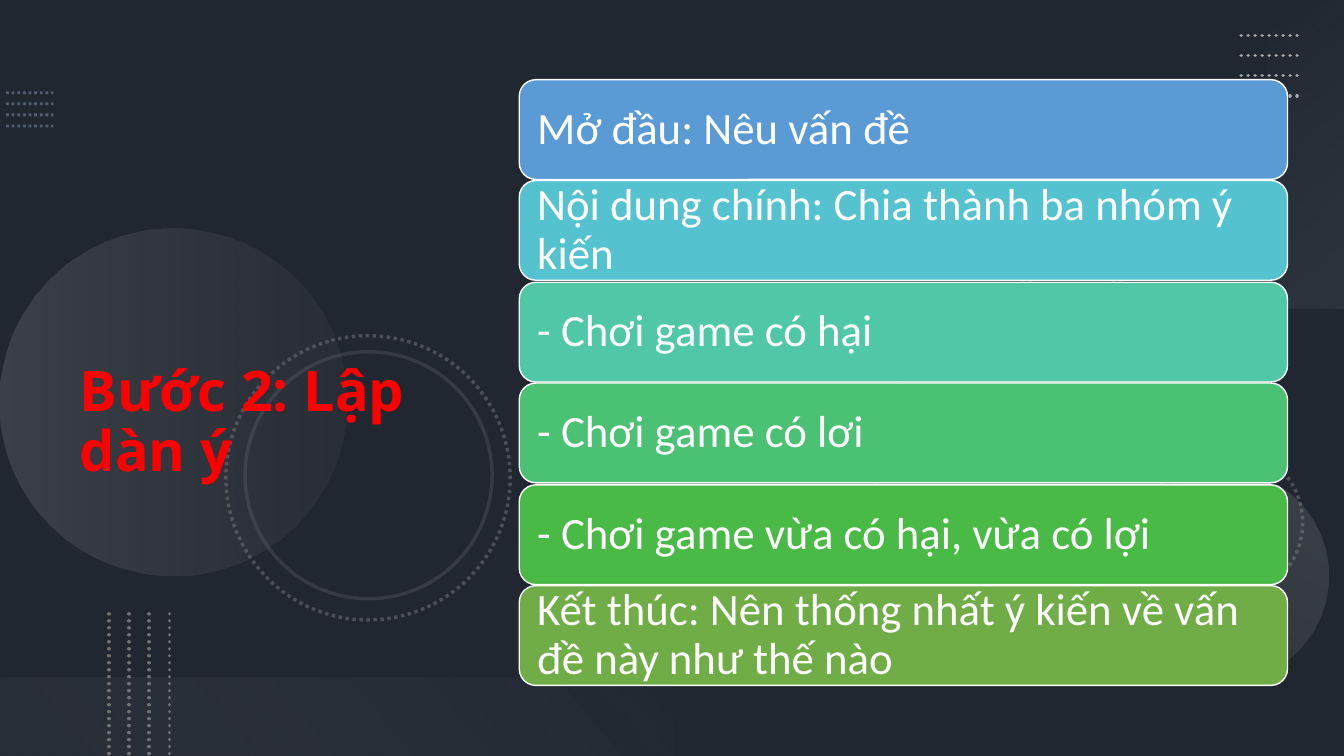
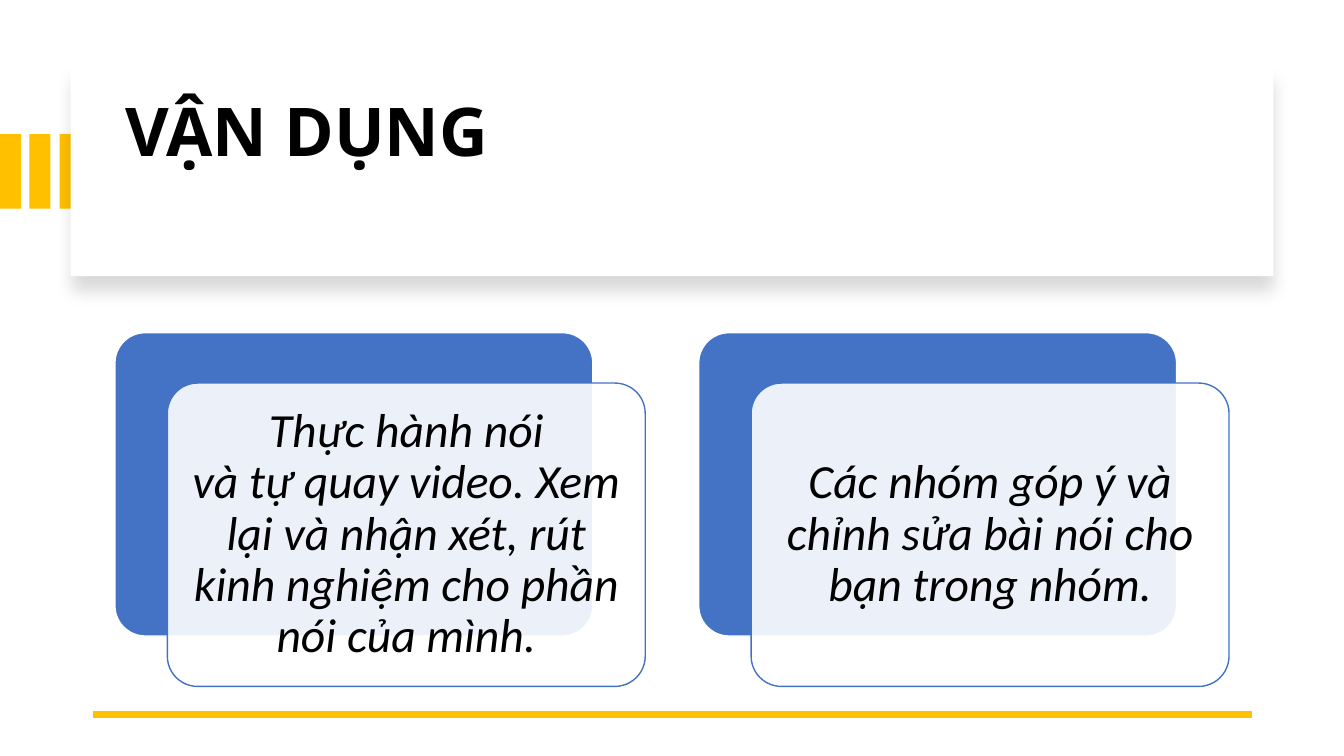
"""Build two lesson slides: a speaking outline and a practice task."""
from lxml.etree import SubElement
from pptx import Presentation
from pptx.dml.color import RGBColor
from pptx.enum.dml import MSO_LINE
from pptx.enum.shapes import MSO_CONNECTOR, MSO_SHAPE as SHAPE
from pptx.enum.text import MSO_ANCHOR as ANCHOR, MSO_AUTO_SIZE, PP_ALIGN as ALIGN
from pptx.oxml.ns import qn
from pptx.util import Emu, Pt

PX = 9144
SLIDE_SIZE = (1333, 750)
COLOURS = {
    "slate": "44546A", "black": "000000", "white": "FFFFFF", "red": "FF0000",
    "mist": "8497B0", "grey": "767171", "silver": "AFABAB", "pale": "F5F5F5",
    "gold": "FFC000", "blue": "4472C4",
}
TITLE_FONT, BODY_FONT = "Open Sans", "Calibri"
HARD_SPACE = chr(160)

OUTLINE_TITLE = "Bước 2: Lập dàn ý"
OUTLINE_STEPS = [
    ("Mở đầu: Nêu vấn đề", "5B9BD5"),
    ("Nội dung chính: Chia thành ba nhóm ý kiến", "55C3CF"),
    ("- Chơi game có hại", "50C8A7"),
    ("- Chơi game có lơi", "4BC174"),
    ("- Chơi game vừa có hại, vừa có lợi", "4ABA46"),
    ("Kết thúc: Nên thống nhất ý kiến về vấn đề này như thế nào", "70AD47"),
]
PRACTICE_TITLE = "VẬN DỤNG"
PRACTICE_TASKS = [
    f"Thực hành nói và{HARD_SPACE}tự{HARD_SPACE}quay video. Xem lại và nhận xét, "
    "rút kinh nghiệm cho phần nói của mình.",
    "Các nhóm góp ý và chỉnh sửa bài nói cho bạn trong nhóm.",
]

RINGS = [
    (869, 274, 390, 30, True),
    (1141, 443, 151, 30, True),
    (224, 333, 282, 30, True),
    (243, 349, 245, 15, False),
]
GRADIENTS = [
    (SHAPE.OVAL, (0, 227, 344, 344), 270, 90, [(0, "silver", 20), (100, "grey", 10)]),
    (SHAPE.OVAL, (1110, 467, 208, 208), 210, 90, [(0, "silver", 10), (100, "silver", 20)]),
    (SHAPE.RECTANGLE, (1142, 114, 306, 78), 270, 140, [(0, "pale", 0), (100, "silver", 10)]),
    (SHAPE.RECTANGLE, (0, 672, 667, 78), 180, 140, [(10, "grey", 10), (100, "pale", 0)]),
]
DOT_ROWS = [
    {"start": (6, 92), "length": (47, 0), "step": (0, 11), "style": ("mist", 2, 50, "flat")},
    {"start": (1231, 35), "length": (60, 0), "step": (0, 20), "style": ("silver", 2.5, 100, "rnd")},
    {"start": (108, 609), "length": (0, 141), "step": (20, 0), "style": ("grey", 2.5, 100, "rnd")},
]
DOTS_PER_ROW = 4


def px(value):
    return Emu(value * PX)


def rgb(name):
    return RGBColor.from_string(COLOURS.get(name, name))


def set_alpha(colour_element, percent):
    SubElement(colour_element, qn("a:alpha")).set("val", str(percent * 1000))


def set_line(line, colour, width, dotted=False):
    line.color.rgb = rgb(colour)
    line.width = Pt(width)
    if dotted:
        line.dash_style = MSO_LINE.ROUND_DOT


def add_box(slide, kind, box, fill=None, alpha=100, corner=None):
    shape = slide.shapes.add_shape(kind, *map(px, box))
    shape.shadow.inherit = False
    shape.line.fill.background()
    if corner is not None:
        shape.adjustments[0] = corner
    if fill is None:
        shape.fill.background()
    else:
        shape.fill.solid()
        shape.fill.fore_color.rgb = rgb(fill)
        if alpha < 100:
            set_alpha(next(shape.element.spPr.iter(qn("a:srgbClr"))), alpha)
    return shape


def add_gradient(slide, kind, box, rotation, angle, stops):
    shape = add_box(slide, kind, box)
    shape.rotation = rotation
    shape.fill.gradient()
    shape.fill.gradient_angle = 360 - angle
    for gradient_stop, (position, colour, _) in zip(shape.fill.gradient_stops, stops):
        gradient_stop.position = position / 100
        gradient_stop.color.rgb = rgb(colour)
    colour_elements = list(shape.element.spPr.iter(qn("a:srgbClr")))
    for colour_element, (_, _, alpha) in zip(colour_elements, stops):
        set_alpha(colour_element, alpha)


def add_line(slide, start, end, colour, width, alpha=100, cap="flat", dotted=False):
    connector = slide.shapes.add_connector(MSO_CONNECTOR.STRAIGHT, *map(px, start + end))
    set_line(connector.line, colour, width, dotted)
    properties = connector.element.spPr
    properties.find(qn("a:ln")).set("cap", cap)
    if alpha < 100:
        set_alpha(next(properties.iter(qn("a:srgbClr"))), alpha)
    SubElement(properties, qn("a:effectLst"))


def write(shape, text, font, size, colour, margins, anchor=ANCHOR.MIDDLE,
          align=ALIGN.LEFT, bold=False, italic=False):
    frame = shape.text_frame
    frame.text = text
    frame.word_wrap = True
    frame.auto_size = MSO_AUTO_SIZE.NONE
    frame.vertical_anchor = anchor
    frame.margin_left = frame.margin_right = px(margins[0])
    frame.margin_top = frame.margin_bottom = px(margins[1])
    paragraph = frame.paragraphs[0]
    paragraph.alignment = align
    paragraph.line_spacing = 0.9
    for run in paragraph.runs:
        run.font.name = font
        run.font.size = Pt(size)
        run.font.bold = bold
        run.font.italic = italic
        run.font.color.rgb = rgb(colour)


def add_title(slide, text, box, size, colour, anchor):
    title = slide.shapes.title
    title.left, title.top, title.width, title.height = map(px, box)
    write(title, text, TITLE_FONT, size, colour, (10, 5), anchor, bold=True)
    title.element.getparent().append(title.element)


def add_slide(presentation, background):
    slide = presentation.slides.add_slide(presentation.slide_layouts[5])
    slide.background.fill.solid()
    slide.background.fill.fore_color.rgb = rgb(background)
    return slide


def add_drop_shadow(shape):
    effects = shape.element.spPr.find(qn("a:effectLst"))
    shadow = SubElement(effects, qn("a:outerShdw"), blurRad=str(Pt(11)), dist=str(Pt(10)),
                        dir="5400000", algn="t", rotWithShape="0")
    set_alpha(SubElement(shadow, qn("a:srgbClr"), val=COLOURS["black"]), 15)


def build_outline(presentation):
    slide = add_slide(presentation, "slate")
    add_box(slide, SHAPE.RECTANGLE, (0, 0) + SLIDE_SIZE, "black", 53)
    for left, top, size, alpha, dotted in RINGS:
        ring = add_box(slide, SHAPE.OVAL, (left, top, size, size))
        ring.rotation = 75
        set_line(ring.line, "silver", 2.5, dotted)
        set_alpha(next(ring.element.spPr.iter(qn("a:srgbClr"))), alpha)
    for gradient in GRADIENTS:
        add_gradient(slide, *gradient)
    for row in DOT_ROWS:
        (left, top), (width, height), (step_x, step_y) = row["start"], row["length"], row["step"]
        for index in range(DOTS_PER_ROW):
            x, y = left + index * step_x, top + index * step_y
            add_line(slide, (x, y), (x + width, y + height), *row["style"], dotted=True)
    add_title(slide, OUTLINE_TITLE, (69, 69, 420, 416), 40, "red", ANCHOR.BOTTOM)
    for index, (text, colour) in enumerate(OUTLINE_STEPS):
        step = add_box(slide, SHAPE.ROUNDED_RECTANGLE,
                       (515, 79 + index * 201 // 2, 762, 99), colour)
        set_line(step.line, "white", 1)
        write(step, text, BODY_FONT, 32, "white", (13, 0))


def build_practice(presentation):
    slide = add_slide(presentation, "white")
    for index in range(3):
        add_box(slide, SHAPE.RECTANGLE, (index * 59 // 2, 133, 21, 74), "gold")
    header = add_box(slide, SHAPE.RECTANGLE, (70, 67, 1193, 207), "white")
    add_drop_shadow(header)
    add_title(slide, PRACTICE_TITLE, (114, 93, 1113, 170), 48, "black", ANCHOR.TOP)
    add_line(slide, (92, 709), (1242, 709), "gold", 4.5)
    for index, text in enumerate(PRACTICE_TASKS):
        left = 114 + index * 579
        back = add_box(slide, SHAPE.ROUNDED_RECTANGLE, (left, 330, 474, 301), "blue", corner=0.1)
        set_line(back.line, "white", 1)
        card = add_box(slide, SHAPE.ROUNDED_RECTANGLE, (left + 52, 380, 474, 301),
                       "white", 90, corner=0.1)
        set_line(card.line, "blue", 1)
        write(card, text, BODY_FONT, 34, "black", (14, 14), align=ALIGN.CENTER, italic=True)


def main():
    presentation = Presentation()
    presentation.slide_width, presentation.slide_height = map(px, SLIDE_SIZE)
    build_outline(presentation)
    build_practice(presentation)
    presentation.save("out.pptx")


if __name__ == "__main__":
    main()
